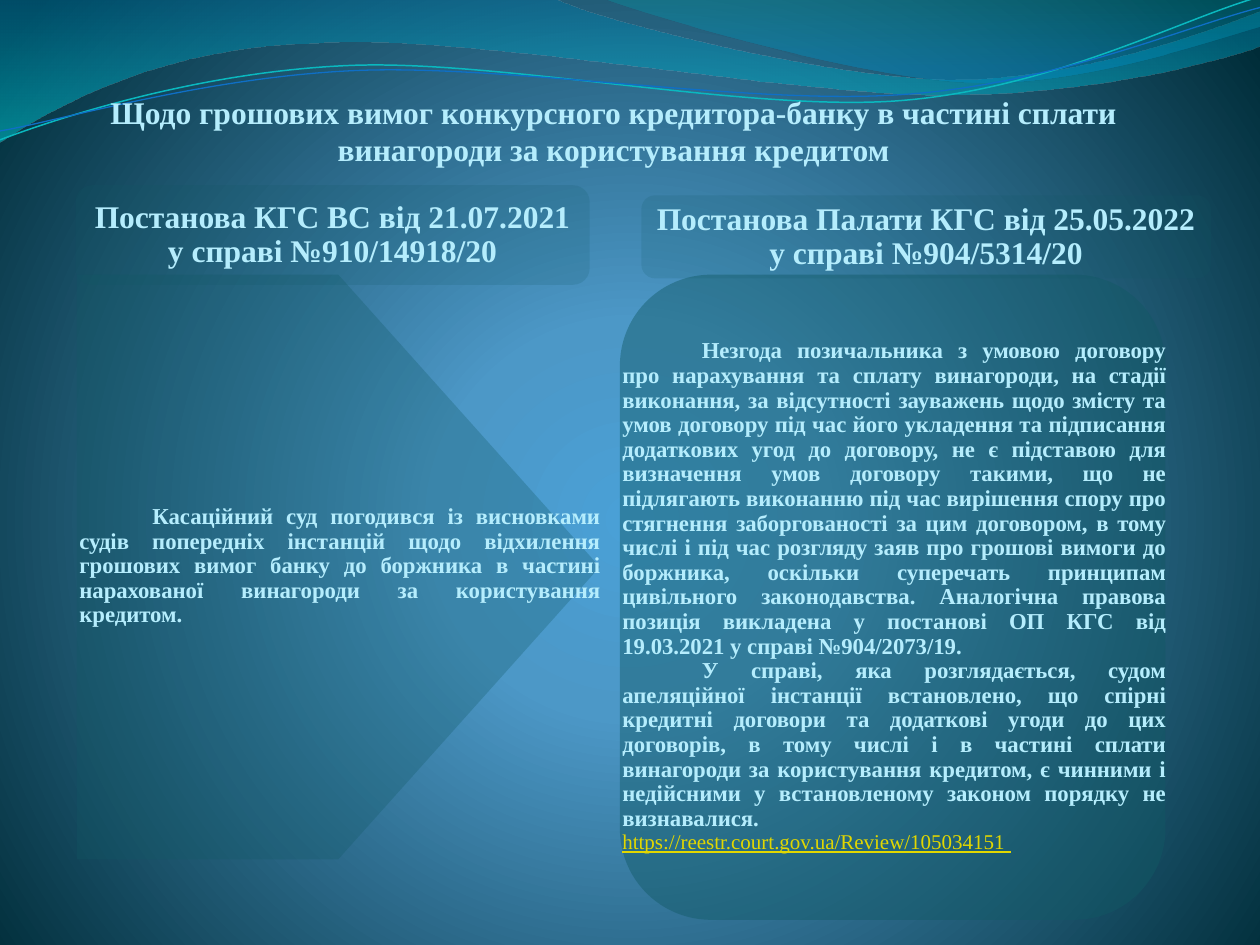
import math

from lxml import etree
from pptx import Presentation
from pptx import util as u
from pptx.dml.color import RGBColor
from pptx.enum import shapes, text
from pptx.oxml import parse_xml
from pptx.oxml.ns import qn

Inches, Pt = u.Inches, u.Pt
FONT = "Times New Roman"
COLORS = {
    "panel": "115964", "text": "B5EDFD", "link": "E2D700",
    "glow": "4AA0D6", "mid": "4C98C7", "edge": "002C38",
    "wave_blue": "0074A1", "wave_cyan": "00C6CF",
    "crest_teal": "00A1A9", "crest_blue": "008BBF",
    "line_teal": "0AB8BF", "line_blue": "0F6FC6",
}
NS = 'xmlns:a="http://schemas.openxmlformats.org/drawingml/2006/main"'
DOWN = '<a:lin ang="5400000" scaled="1"/>'
CIRCLE = ('<a:path path="circle"><a:fillToRect l="10000" t="110000" '
          'r="10000" b="100000"/></a:path>')


def rgb(name):
    return RGBColor.from_string(COLORS[name])


def set_gradient(fill, parent, stops, direction):
    """Fill with a gradient; stops are (position %, colour, opacity %)."""
    fill.solid()
    gs = "".join(
        f'<a:gs pos="{pos * 1000}"><a:srgbClr val="{COLORS[c]}">'
        f'<a:alpha val="{alpha * 1000}"/></a:srgbClr></a:gs>'
        for pos, c, alpha in stops)
    grad = parse_xml(f'<a:gradFill {NS} rotWithShape="1"><a:gsLst>{gs}</a:gsLst>'
                     f'{direction}</a:gradFill>')
    solid = parent.find(".//" + qn("a:solidFill"))
    solid.getparent().replace(solid, grad)


def add_outline(s, start, segments, close):
    """Each segment is (x, y) for a line or (x1, y1, x2, y2, x, y) for a curve."""
    builder = s.shapes.build_freeform(*map(Inches, start))
    builder.add_line_segments([tuple(map(Inches, g[-2:])) for g in segments], close=close)
    sp = builder.convert_to_shape()
    sp.shadow.inherit = False
    # Bend the straight steps that have control points
    steps = list(sp._element.spPr.iter(qn("a:lnTo")))
    for step, g in zip(steps, segments):
        if len(g) == 6:
            pts = "".join(f'<a:pt x="{Inches(x) - sp.left}" y="{Inches(y) - sp.top}"/>'
                          for x, y in zip(g[::2], g[1::2]))
            bend = parse_xml(f"<a:cubicBezTo {NS}>{pts}</a:cubicBezTo>")
            step.getparent().replace(step, bend)
    return sp


def turn(values, center, degrees):
    """Rotate a flat run of x, y values about a centre."""
    cx, cy = center
    c, n = math.cos(math.radians(degrees)), math.sin(math.radians(degrees))
    out = []
    for x, y in zip(values[::2], values[1::2]):
        out += [cx + (x - cx) * c - (y - cy) * n, cy + (x - cx) * n + (y - cy) * c]
    return tuple(out)


def add_waves(s):
    """Header waves and the two thin lines along them."""
    bands = [
        ((0, 0), [(4.4, -0.01), (4.76, 0.17, 6.64, 0.63, 7.58, 0.63),
                  (8.53, 0.63, 9.58, 0.26, 10, 0.09), (10.01, 0.36),
                  (9.83, 0.44, 8.7, 0.76, 7.46, 0.75),
                  (6.22, 0.75, 3.82, 0.28, 2.57, 0.34),
                  (1.29, 0.36, 0.46, 0.83, -0.01, 1.13)],
         [(0, "wave_blue", 45), (100, "wave_cyan", 55)]),
        ((4.79, -0.01), [(5.09, 0.11, 6.82, 0.62, 7.69, 0.65),
                         (8.56, 0.69, 9.61, 0.32, 10, 0.21), (10, 0)],
         [(0, "crest_teal", 30), (80, "crest_blue", 45)]),
    ]
    for start, segments, stops in bands:
        sp = add_outline(s, start, segments, True)
        sp.line.fill.background()
        set_gradient(sp.fill, sp._element.spPr, stops, DOWN)

    tilt = 2.7
    lines = [
        ("line_teal", 0.85, (4.99, 0.57), (0, 1.11),
         [(0.48, 0.93, 1.58, 0.57, 2.77, 0.52), (3.95, 0.47, 5.93, 0.89, 7.13, 0.8),
          (8.33, 0.71, 9.38, 0.15, 9.98, -0.02)]),
        ("line_blue", 0.75, (5, 0.59), (0, 1.04),
         [(0.47, 0.96, 1.64, 0.61, 2.83, 0.56), (4.03, 0.51, 5.97, 0.84, 7.17, 0.75),
          (8.36, 0.67, 9.41, 0.21, 10, 0.06)]),
    ]
    for color, width, center, start, segments in lines:
        sp = add_outline(s, turn(start, center, tilt),
                         [turn(g, center, tilt) for g in segments], False)
        sp.rotation = 360 - tilt
        sp.fill.background()
        sp.line.color.rgb = rgb(color)
        sp.line.width = Pt(width)


def write(tf, paragraphs, size, align, spacing, insets, indent=0):
    tf.word_wrap = True
    tf.auto_size = text.MSO_AUTO_SIZE.NONE
    tf.vertical_anchor = text.MSO_ANCHOR.MIDDLE
    tf.margin_left, tf.margin_top, tf.margin_right, tf.margin_bottom = map(Inches, insets)
    for i, words in enumerate(paragraphs):
        p = tf.paragraphs[0] if i == 0 else tf.add_paragraph()
        p.text = words
        p.alignment = align
        p.line_spacing = spacing
        p.space_before = p.space_after = Pt(0)
        p.font.name, p.font.size, p.font.bold = FONT, Pt(size), True
        p.font.color.rgb = rgb("text")
        if indent:
            p._p.get_or_add_pPr().set("indent", str(Inches(indent)))


def add_title(s, box, words):
    title = s.shapes.title
    title.left, title.top, title.width, title.height = map(Inches, box)
    write(title.text_frame, [words], 18, text.PP_ALIGN.CENTER, 1.0, (0, 0, 0.02, 0))
    s.shapes._spTree.append(title._element)  # in front of the waves


def add_panel(s, kind, box, opacity):
    sp = s.shapes.add_shape(kind, *map(Inches, box))
    sp.shadow.inherit = False
    sp.line.fill.background()
    sp.fill.solid()
    sp.fill.fore_color.rgb = rgb("panel")
    color = sp._element.spPr.find(".//" + qn("a:srgbClr"))
    etree.SubElement(color, qn("a:alpha")).set("val", str(opacity * 1000))
    return sp


def add_heading(s, box, opacity, words):
    sp = add_panel(s, shapes.MSO_SHAPE.ROUNDED_RECTANGLE, box, opacity)
    write(sp.text_frame, [words], 18, text.PP_ALIGN.CENTER, 0.9, (0.07,) * 4)


def add_body(s, kind, box, opacity, indent, paragraphs, address=None):
    """Panel with its text in a box of the same size on top."""
    add_panel(s, kind, box, opacity)
    tf = s.shapes.add_textbox(*map(Inches, box)).text_frame
    write(tf, paragraphs, 13, text.PP_ALIGN.JUSTIFY, 0.9, (0.02, 0.01, 0, 0.02), indent)
    if address:
        p = tf.add_paragraph()
        p.text = address
        p.line_spacing = 0.9
        p.font.name, p.font.size, p.font.underline = FONT, Pt(12), True
        p.font.color.rgb = rgb("link")


def main():
    prs = Presentation()
    prs.slide_width, prs.slide_height = Inches(10), Inches(7.5)
    s = prs.slides.add_slide(prs.slide_layouts[5])
    set_gradient(s.background.fill, s._element.cSld.find(qn("p:bg")),
                 [(0, "glow", 100), (25, "mid", 100), (100, "edge", 100)], CIRCLE)
    add_waves(s)
    add_title(s, (0.67, 0.73, 8.42, 0.61),
              "Щодо грошових вимог конкурсного кредитора-банку в частині сплати "
              "винагороди за користування кредитом")

    # Text panels
    add_body(s, shapes.MSO_SHAPE.PENTAGON, (0.61, 2.18, 4.15, 4.64), 29, 0.58, [
        "Касаційний суд погодився із висновками судів попередніх інстанцій щодо "
        "відхилення грошових вимог банку до боржника в частині нарахованої "
        "винагороди за користування кредитом."])
    add_body(s, shapes.MSO_SHAPE.FLOWCHART_ALTERNATE_PROCESS,
             (4.92, 2.18, 4.33, 5.12), 44, 0.63, [
        "Незгода позичальника з умовою договору про нарахування та сплату "
        "винагороди, на стадії виконання, за відсутності зауважень щодо змісту та "
        "умов договору під час його укладення та підписання додаткових угод до "
        "договору, не є підставою для визначення умов договору такими, що не "
        "підлягають виконанню під час вирішення спору про стягнення заборгованості "
        "за цим договором, в тому числі і під час розгляду заяв про грошові вимоги "
        "до боржника, оскільки суперечать принципам цивільного законодавства. "
        "Аналогічна правова позиція викладена у постанові ОП КГС від 19.03.2021 "
        "у справі №904/2073/19.",
        "У справі, яка розглядається, судом апеляційної інстанції встановлено, що "
        "спірні кредитні договори та додаткові угоди до цих договорів, в тому числі "
        "і в частині сплати винагороди за користування кредитом, є чинними і "
        "недійсними у встановленому законом порядку не визнавалися."],
        "https://reestr.court.gov.ua/Review/105034151 ")

    # Case headings
    add_heading(s, (0.6, 1.47, 4.08, 0.79), 17,
                "Постанова КГС ВС від 21.07.2021 у справі №910/14918/20")
    add_heading(s, (5.09, 1.55, 4.52, 0.66), 16,
                "Постанова Палати КГС від 25.05.2022 у справі №904/5314/20")
    prs.save("out.pptx")


if __name__ == "__main__":
    main()
